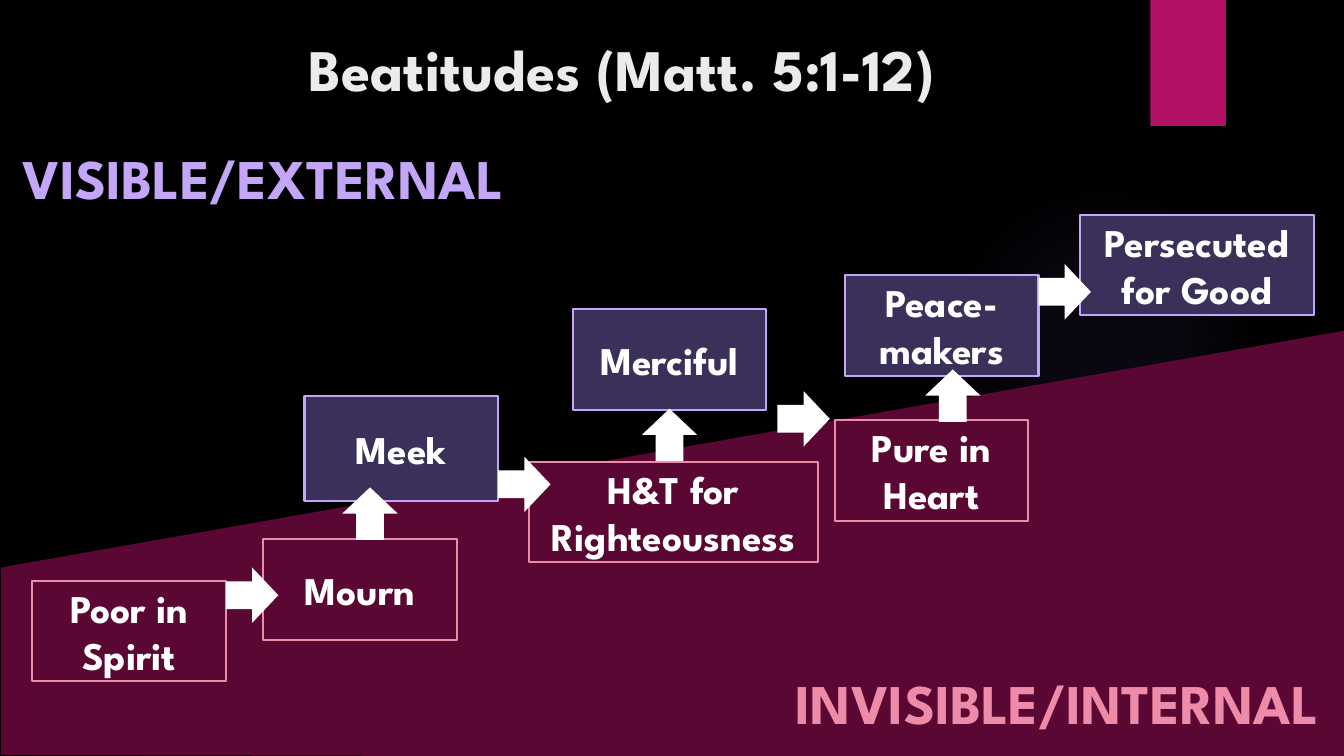
from lxml.etree import SubElement
from pptx import Presentation
from pptx.dml.color import RGBColor
from pptx.enum.shapes import MSO_SHAPE
from pptx.enum.text import MSO_ANCHOR, MSO_AUTO_SIZE, PP_ALIGN
from pptx.oxml.ns import qn
from pptx.util import Inches, Pt

FONT = "League Spartan"
BLACK, WHITE, TITLE_GREY = "000000", "FFFFFF", "EBEBEB"
PINK, WINE, ROSE = "B31166", "5A0833", "EE8BA9"
GLOW, INDIGO, LILAC = "9B6BF2", "3B3059", "C3A6F7"
INTERNAL = (WINE, ROSE)
EXTERNAL = (INDIGO, LILAC)

# text, left, top, width, height, (fill, line)
STEPS = [
    ("Poor in Spirit", 0.32, 5.76, 1.92, 1, INTERNAL),
    ("Mourn", 2.61, 5.35, 1.92, 1, INTERNAL),
    ("Meek", 3.02, 3.93, 1.92, 1.04, EXTERNAL),
    ("H&T for\nRighteousness", 5.25, 4.58, 2.86, 1, INTERNAL),
    ("Merciful", 5.68, 3.07, 1.92, 1, EXTERNAL),
    ("Pure in\nHeart", 8.28, 4.17, 1.92, 1, INTERNAL),
    ("Peace-makers", 8.38, 2.73, 1.92, 1, EXTERNAL),
    ("Persecuted for Good", 10.71, 2.13, 2.32, 1, EXTERNAL),
]
# left, top, rotation
ARROWS = [
    (2.24, 5.63, 0), (3.41, 4.82, 270), (4.94, 4.53, 0), (6.38, 4.04, 270),
    (7.71, 3.88, 0), (9.19, 3.65, 270), (10.3, 2.62, 0),
]


def rgb(value):
    return RGBColor.from_string(value)


def paint(shape, fill, line=None):
    shape.shadow.inherit = False
    shape.fill.solid()
    shape.fill.fore_color.rgb = rgb(fill)
    if line:
        shape.line.color.rgb = rgb(line)
        shape.line.width = Pt(1.5)
    else:
        shape.line.fill.background()


def write(shape, text, size, color, align=PP_ALIGN.CENTER, anchor=MSO_ANCHOR.TOP):
    frame = shape.text_frame
    frame.text = text
    frame_format = {"word_wrap": True, "auto_size": MSO_AUTO_SIZE.NONE,
                    "vertical_anchor": anchor}
    for name, value in frame_format.items():
        setattr(frame, name, value)
    for para in frame.paragraphs:
        para.alignment = align
        for span in para.runs:
            for name, value in {"name": FONT, "size": Pt(size), "bold": True}.items():
                setattr(span.font, name, value)
            span.font.color.rgb = rgb(color)


def add_preset(page, kind, left, top, width, height, fill, line=None):
    shape = page.shapes.add_shape(
        kind, Inches(left), Inches(top), Inches(width), Inches(height))
    paint(shape, fill, line)
    return shape


def add_glow(page):
    """Draw a faint radial light that fades out towards its rim."""
    glow = add_preset(page, MSO_SHAPE.OVAL, 9.41, 1.83, 3.08, 3.08, GLOW)
    solid = glow._element.spPr.find(qn("a:solidFill"))
    gradient = solid.makeelement(qn("a:gradFill"), {"rotWithShape": "1"})
    stops = SubElement(gradient, qn("a:gsLst"))
    for position, opacity in [(0, 7), (36, 6), (69, 0)]:
        stop = SubElement(stops, qn("a:gs"), pos=str(position * 1000))
        color = SubElement(stop, qn("a:srgbClr"), val=GLOW)
        SubElement(color, qn("a:alpha"), val=str(opacity * 1000))
    radial = SubElement(gradient, qn("a:path"), {"path": "circle"})
    SubElement(radial, qn("a:fillToRect"), {side: "50000" for side in "ltrb"})
    solid.getparent().replace(solid, gradient)


def add_slope(page):
    corners = [(13.34, 7.52), (0.01, 7.49), (0.01, 5.63), (13.34, 3.28)]
    points = [(Inches(x), Inches(y)) for x, y in corners]
    builder = page.shapes.build_freeform(*points[0], scale=1.0)
    builder.add_line_segments(points[1:], close=True)
    paint(builder.convert_to_shape(), WINE)


def add_title(page, text):
    title = page.shapes.title
    place = {"left": 1.02, "top": 0.27, "width": 10.29, "height": 1.53}
    for name, value in place.items():
        setattr(title, name, Inches(value))
    write(title, text, 42, TITLE_GREY)


def add_label(page, text, left, top, width, height, color, align):
    box = page.shapes.add_textbox(
        Inches(left), Inches(top), Inches(width), Inches(height))
    write(box, text, 40, color, align)


def add_step(page, text, left, top, width, height, colors):
    box = add_preset(page, MSO_SHAPE.RECTANGLE, left, top, width, height, *colors)
    write(box, text, 28, WHITE, anchor=MSO_ANCHOR.MIDDLE)


def add_arrow(page, left, top, rotation):
    arrow = add_preset(page, MSO_SHAPE.RIGHT_ARROW, left, top, 0.52, 0.55, WHITE)
    arrow.rotation = rotation


def main():
    deck = Presentation()
    deck.slide_width, deck.slide_height = Inches(13.33), Inches(7.5)
    page = deck.slides.add_slide(deck.slide_layouts.get_by_name("Title Only"))
    page.background.fill.solid()
    page.background.fill.fore_color.rgb = rgb(BLACK)

    add_glow(page)
    add_preset(page, MSO_SHAPE.RECTANGLE, 11.41, 0, 0.75, 1.25, PINK)
    add_slope(page)
    add_title(page, "Beatitudes (Matt. 5:1-12)")
    add_label(page, "VISIBLE/EXTERNAL", 0.08, 1.37, 5.06, 0.79, LILAC, PP_ALIGN.CENTER)
    add_label(page, "INVISIBLE/INTERNAL", 7.58, 6.58, 5.6, 0.83, ROSE, PP_ALIGN.RIGHT)
    for step in STEPS:
        add_step(page, *step)
    for arrow in ARROWS:
        add_arrow(page, *arrow)

    deck.save("out.pptx")


if __name__ == "__main__":
    main()
